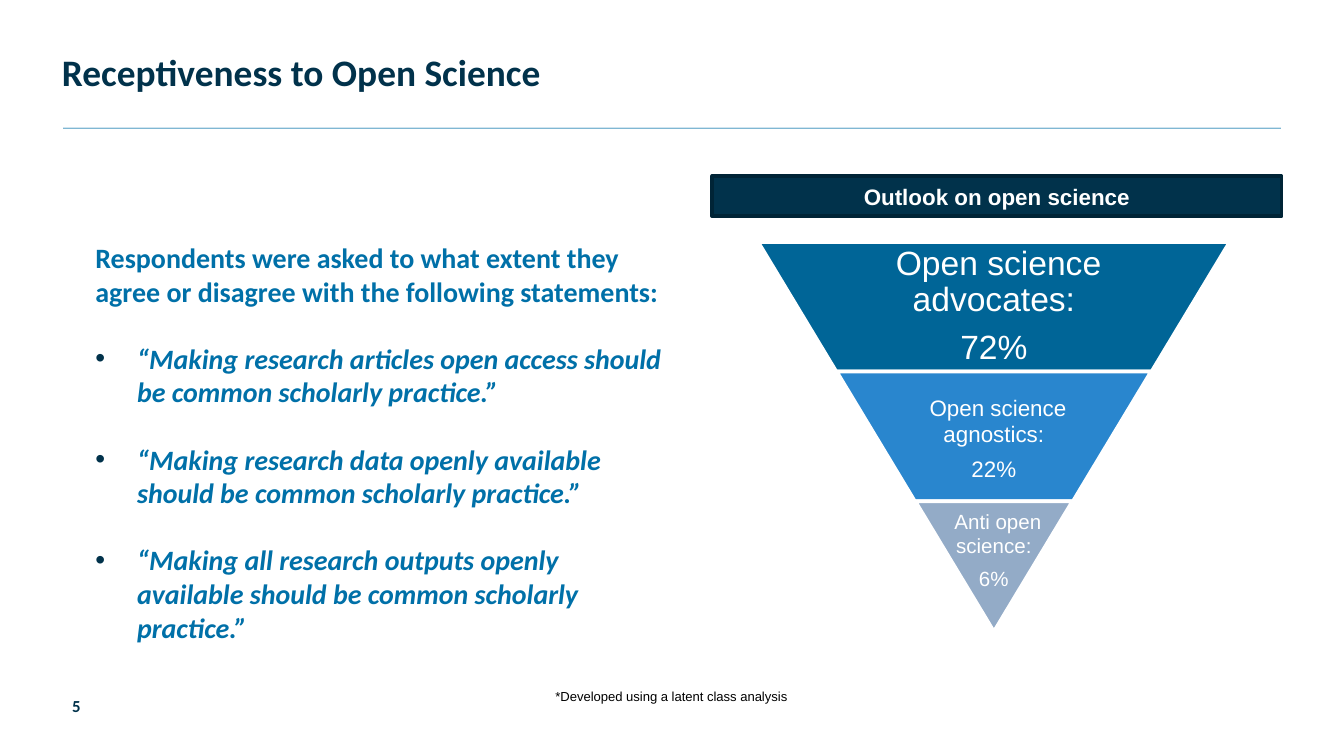
from lxml import etree
from pptx import Presentation
from pptx.dml.color import RGBColor
from pptx.enum.shapes import MSO_CONNECTOR, MSO_SHAPE
from pptx.enum.text import MSO_ANCHOR, MSO_AUTO_SIZE, PP_ALIGN
from pptx.oxml.ns import qn
from pptx.util import Pt

PX = 4572  # 200 px to the inch
TOP, MIDDLE = MSO_ANCHOR.TOP, MSO_ANCHOR.MIDDLE
LEFT, CENTER, RIGHT = PP_ALIGN.LEFT, PP_ALIGN.CENTER, PP_ALIGN.RIGHT
NONE = MSO_AUTO_SIZE.NONE
TRAP, RECT = MSO_SHAPE.TRAPEZOID, MSO_SHAPE.RECTANGLE
STRAIGHT = MSO_CONNECTOR.STRAIGHT
COLORS = {
    "navy": "01324B", "edge": "002436", "blue": "0070A8", "white": "FFFFFF",
    "black": "000000", "deep": "006597", "mid": "2986CE", "pale": "93ABC7",
}


def add_run(para, text, size, color, font="Arial", bold=False, italic=False):
    run = para.add_run()
    run.text = text
    run.font.size = Pt(size)
    run.font.name = font
    run.font.bold = bold
    run.font.italic = italic
    run.font.color.rgb = RGBColor.from_string(COLORS[color])


def set_frame(shape, box, anchor=TOP, pad=(0, 0, 0, 0)):
    shape.left, shape.top, shape.width, shape.height = [n * PX for n in box]
    frame = shape.text_frame
    frame.word_wrap = True
    frame.auto_size = NONE
    frame.vertical_anchor = anchor
    (frame.margin_left, frame.margin_top,
     frame.margin_right, frame.margin_bottom) = [n * PX for n in pad]
    return frame


prs = Presentation()
prs.slide_width, prs.slide_height = 2000 * PX, 1125 * PX
slide = prs.slides.add_slide(prs.slide_layouts[1])
shapes = slide.shapes

# Title
para = set_frame(shapes.title, (92, 62, 1816, 60)).paragraphs[0]
para.alignment = LEFT
para.line_spacing = 1.17
add_run(para, "Receptiveness to Open Science", 20, "navy", "Calibri", True)

# Rule under the title
rule = shapes.add_connector(STRAIGHT, 94 * PX, 191 * PX, 1906 * PX, 191 * PX)
rule.line.width = Pt(0.75)
rule.line.color.rgb = RGBColor.from_string(COLORS["blue"])
etree.SubElement(rule._element.spPr, qn("a:effectLst"))
tint = rule._element.spPr.find(".//" + qn("a:srgbClr"))
etree.SubElement(tint, qn("a:alpha"), val="49000")

# Question and statements
frame = set_frame(slide.placeholders[1], (92, 358, 908, 602))
lines = [
    ("Respondents were asked to what extent they", False),
    ("agree or disagree with the following statements:", False),
    ("“Making research articles open access should be common scholarly practice.”", True),
    ("“Making research data openly available should be common scholarly practice.”", True),
    ("“Making all research outputs openly available should be common scholarly practice.”", True),
]
for i, (text, quote) in enumerate(lines):
    para = frame.paragraphs[0] if i == 0 else frame.add_paragraph()
    props = para._p.get_or_add_pPr()
    props.set("marL", str((112 if quote else 100) * PX))
    props.set("indent", str((-62 if quote else -50) * PX))
    if quote:
        tone = etree.SubElement(props, qn("a:buClr"))
        etree.SubElement(tone, qn("a:srgbClr"), val=COLORS["navy"])
        etree.SubElement(props, qn("a:buFont"), typeface="Arial")
        etree.SubElement(props, qn("a:buChar"), char="•")
    else:
        etree.SubElement(props, qn("a:buNone"))
    para.alignment = LEFT
    para.space_before = Pt(18 if quote else 0)
    add_run(para, text, 15, "blue", "Calibri", True, quote)

# Inverted pyramid: each tier loses a third of the width
MID, WIDE, TALL, HEAD = 1479, 702, 193, 360
tiers = [
    ("Open science advocates:", "72%", "deep", 456, 18, 18, 6.3, MIDDLE),
    ("Open science agnostics:", "22%", "mid", 304, 16, 12, 5.6, MIDDLE),
    ("Anti open science:", "6%", "pale", 234, 16, 11, 5.6, TOP),
]
for i, (name, share, fill, room, lead, size, gap, anchor) in enumerate(tiers):
    top = HEAD + i * TALL
    width = WIDE * (3 - i) // 3
    tier = shapes.add_shape(TRAP, (MID - width // 2) * PX, top * PX,
                            width * PX, TALL * PX)
    tier.rotation = 180
    tier.adjustments[0] = 0.603
    tier.shadow.inherit = False
    tier.fill.solid()
    tier.fill.fore_color.rgb = RGBColor.from_string(COLORS[fill])
    tier.line.color.rgb = RGBColor.from_string(COLORS["white"])
    tier.line.width = Pt(2)

    label = shapes.add_textbox(0, 0, 0, 0)
    frame = set_frame(label, (MID - room // 2, top, room, TALL), anchor, (4, 4, 4, 4))
    first, last = frame.paragraphs[0], frame.add_paragraph()
    for para in (first, last):
        para.alignment = CENTER
        para.line_spacing = 0.9
    last.space_before = Pt(gap)
    add_run(first, " ", lead, "white")
    add_run(first, name, size, "white")
    add_run(last, share, size, "white")

# Footnote
note = shapes.add_textbox(0, 0, 0, 0)
para = set_frame(note, (398, 1015, 1202, 44), TOP, (20, 10, 20, 10)).paragraphs[0]
para.alignment = CENTER
add_run(para, "*Developed using a latent class analysis", 7, "black")

# Pyramid heading
banner = shapes.add_shape(RECT, 0, 0, 0, 0)
banner.shadow.inherit = False
banner.fill.solid()
banner.fill.fore_color.rgb = RGBColor.from_string(COLORS["navy"])
banner.line.color.rgb = RGBColor.from_string(COLORS["edge"])
banner.line.width = Pt(2)
para = set_frame(banner, (1060, 262, 847, 60), MIDDLE, (20, 10, 20, 10)).paragraphs[0]
para.alignment = CENTER
add_run(para, "Outlook on open science", 12, "white", bold=True)

# Page number
page = shapes.add_textbox(0, 0, 0, 0)
para = set_frame(page, (90, 1035, 30, 36), MIDDLE, (0, 0, 0, 6)).paragraphs[0]
para.alignment = RIGHT
add_run(para, "5", 9, "navy", "Calibri", True)

prs.save("out.pptx")
